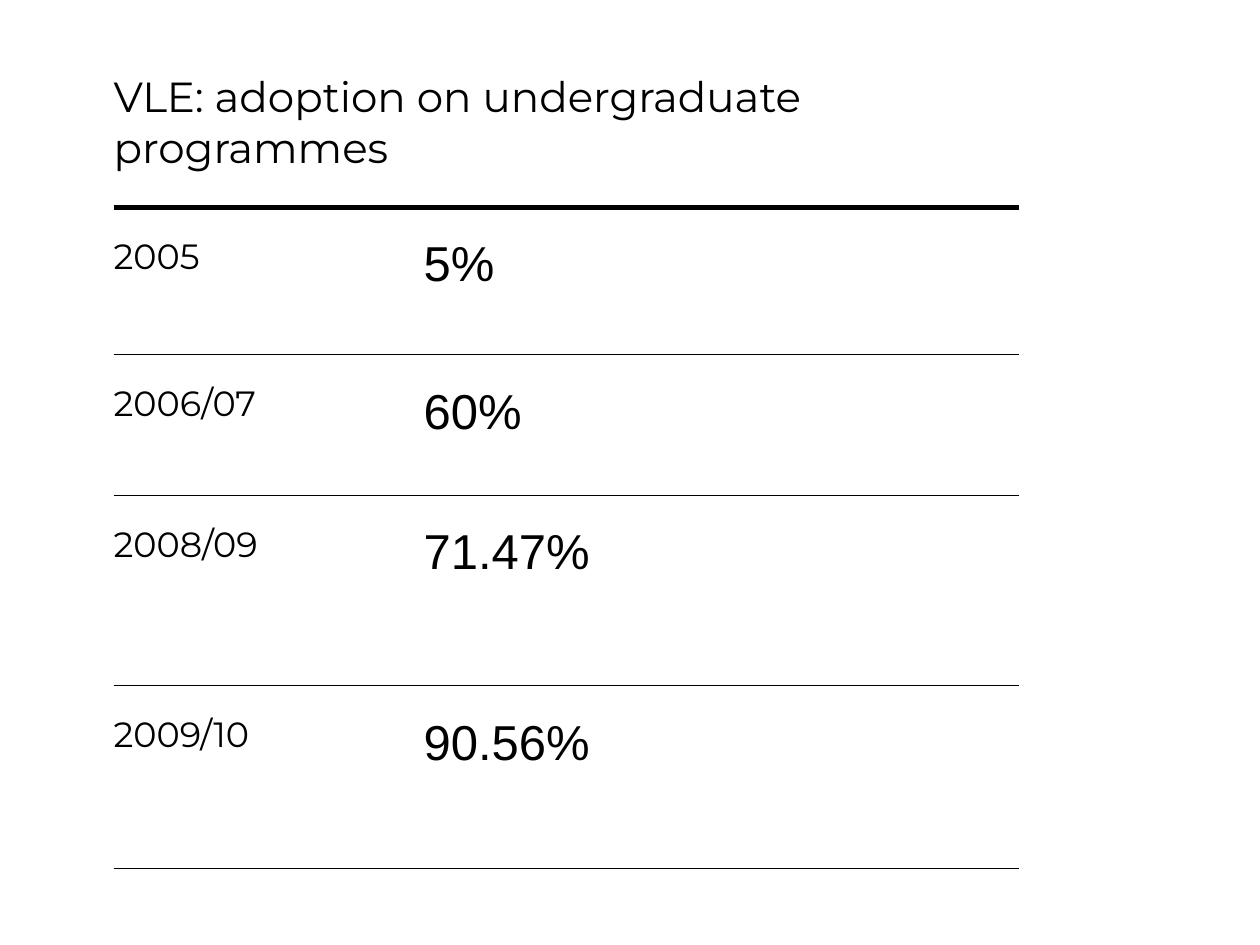
import pptx
import pptx.dml.color
import pptx.enum.text
import pptx.oxml
import pptx.oxml.ns
import pptx.util
from pptx.util import Cm

ALIGN = pptx.enum.text.PP_ALIGN
INK = {"text": "000000", "rule": "000000"}
PLAIN = "{2D5ABB26-0587-4C30-8999-92F81FD0307C}"
PAD = {"margin_left": 0, "margin_right": 0}
HEAD = {
    "cell": {**PAD, "margin_top": 0, "margin_bottom": Cm(0.66)},
    "font": {"name": "Montserrat", "size": pptx.util.Pt(24)},
    "para": {"alignment": ALIGN.LEFT},
}
YEAR = {
    "cell": {**PAD, "margin_top": Cm(0.56), "margin_bottom": Cm(0.56)},
    "font": {"name": "Montserrat", "size": pptx.util.Pt(20)},
    "para": {"alignment": ALIGN.LEFT},
}
RATE = {
    "cell": {**PAD, "margin_top": Cm(0.61), "margin_bottom": Cm(0.56)},
    "font": {"name": "Arial", "size": pptx.util.Pt(28)},
    "para": {"alignment": ALIGN.JUSTIFY},
}
TITLE = "VLE: adoption on undergraduate programmes"
DATA = [
    ("2005", "5%", 2.97),
    ("2006/07", "60%", 2.84),
    ("2008/09", "71.47%", 3.84),
    ("2009/10", "90.56%", 3.68),
]


def apply(item, values):
    """Set each attribute named in values."""
    for name, value in values.items():
        setattr(item, name, value)


def rule(cell, width):
    """Draw the line under a cell."""
    line = pptx.oxml.parse_xml(
        f'<a:lnB {pptx.oxml.ns.nsdecls("a")} w="{pptx.util.Pt(width)}">'
        f'<a:solidFill><a:srgbClr val="{INK["rule"]}"/></a:solidFill></a:lnB>'
    )
    cell._tc.get_or_add_tcPr().insert(0, line)


def write(cell, text, look):
    """Put formatted text in a cell."""
    apply(cell, look["cell"])
    para = cell.text_frame.paragraphs[0]
    apply(para, look["para"])
    run = para.add_run()
    run.text = text
    apply(run.font, look["font"])
    run.font.color.rgb = pptx.dml.color.RGBColor.from_string(INK["text"])


def build_table(slide, left, top, width, height):
    """Place the adoption table in the given box."""
    frame = slide.shapes.add_table(len(DATA) + 1, 2, left, top, width, height)
    table = frame.table
    apply(table, {"first_row": False, "horz_banding": False})
    table._tbl.tblPr.find(pptx.oxml.ns.qn("a:tableStyleId")).text = PLAIN
    first = Cm(6.25)
    table.columns[0].width = first
    table.columns[1].width = width - first
    deep = [Cm(size) for *_, size in DATA]
    for row, size in zip(table.rows, [height - sum(deep), *deep]):
        row.height = size
    for index, row in enumerate(table.rows):
        for cell in row.cells:
            cell.fill.background()
            rule(cell, 0.75 if index else 3)
    table.cell(0, 0).merge(table.cell(0, 1))
    write(table.cell(0, 0), TITLE, HEAD)
    for index, (year, rate, _) in enumerate(DATA, 1):
        write(table.cell(index, 0), year, YEAR)
        write(table.cell(index, 1), rate, RATE)


def main():
    """Build and save the slide."""
    deck = pptx.Presentation()
    apply(deck, {"slide_width": Cm(25.4), "slide_height": Cm(19.05)})
    slide = deck.slides.add_slide(deck.slide_layouts[6])
    build_table(slide, Cm(2.29), Cm(1.45), Cm(18.26), Cm(16.05))
    deck.save("out.pptx")


if __name__ == "__main__":
    main()
